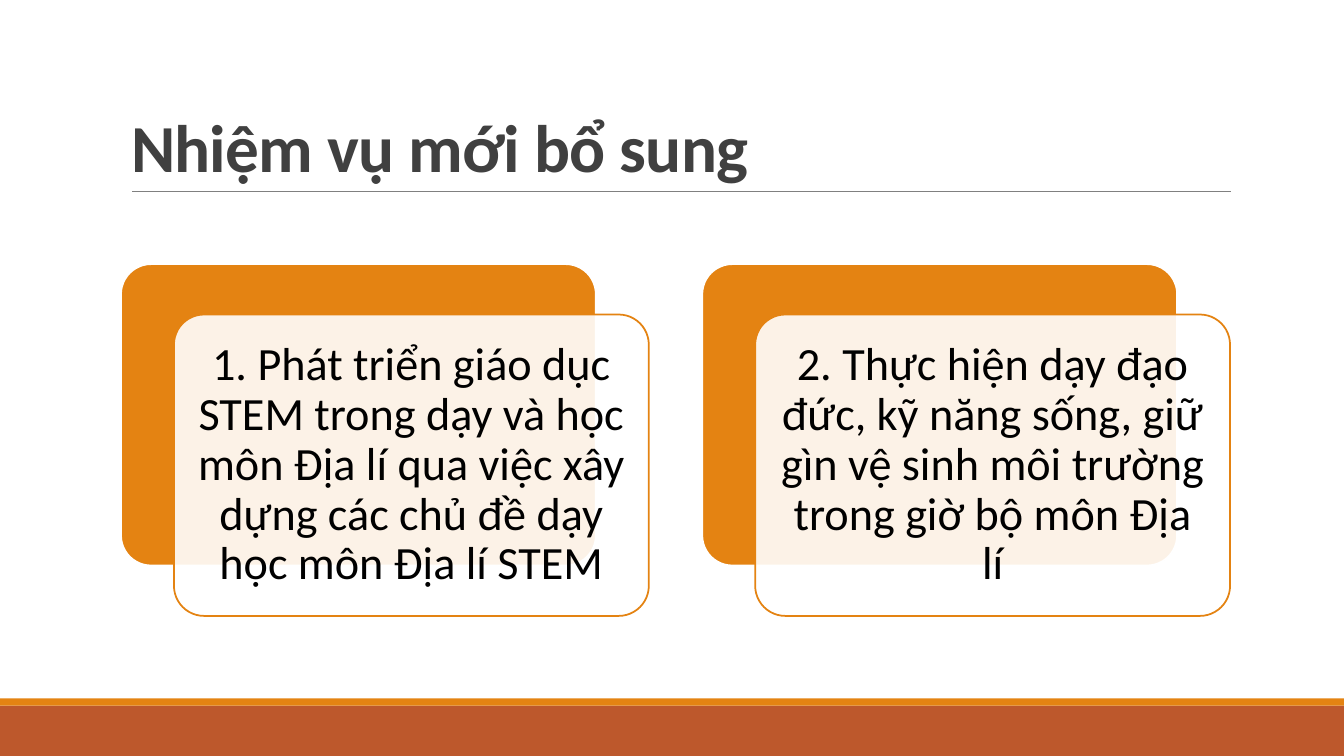
from lxml import etree
from pptx import Presentation
from pptx.dml.color import RGBColor
from pptx.enum.shapes import MSO_CONNECTOR, MSO_SHAPE
from pptx.enum.text import MSO_ANCHOR, MSO_AUTO_SIZE, PP_ALIGN
from pptx.oxml.ns import qn
from pptx.util import Inches, Pt

RECTANGLE = MSO_SHAPE.RECTANGLE
ROUNDED = MSO_SHAPE.ROUNDED_RECTANGLE
STRAIGHT = MSO_CONNECTOR.STRAIGHT
LEFT, CENTER = PP_ALIGN.LEFT, PP_ALIGN.CENTER
MIDDLE, BOTTOM = MSO_ANCHOR.MIDDLE, MSO_ANCHOR.BOTTOM

COLORS = {
    "orange": "E48312",
    "rust": "BD582C",
    "white": "FFFFFF",
    "rule": "808080",
    "title": "404040",
    "text": "000000",
}
TASKS = [
    "1. Phát triển giáo dục STEM trong dạy và học môn Địa lí qua việc xây dựng các chủ đề dạy học môn Địa lí STEM",
    "2. Thực hiện dạy đạo đức, kỹ năng sống, giữ gìn vệ sinh môi trường trong giờ bộ môn Địa lí",
]
CARD_WIDTH, CARD_HEIGHT = 4.71, 2.99
CARD_LEFT, CARD_TOP, CARD_STEP = 1.2, 2.62, 5.765
PANEL_SHIFT_X, PANEL_SHIFT_Y = 0.525, 0.5

presentation = Presentation()
presentation.slide_width = Inches(13.33)
presentation.slide_height = Inches(7.5)
slide = presentation.slides.add_slide(presentation.slide_layouts[5])


def add_box(kind, left, top, width, height, fill, line=None):
    shape = slide.shapes.add_shape(
        kind, Inches(left), Inches(top), Inches(width), Inches(height)
    )
    shape.shadow.inherit = False
    shape.fill.solid()
    shape.fill.fore_color.rgb = RGBColor.from_string(COLORS[fill])
    if line:
        shape.line.color.rgb = RGBColor.from_string(COLORS[line])
        shape.line.width = Pt(1.25)
    else:
        shape.line.fill.background()
    if kind == ROUNDED:
        shape.adjustments[0] = 0.1
    return shape


def write_text(shape, text, *, size, color, align, anchor, spacing,
               bold=False, inset_x=0.1, inset_y=0.05):
    frame = shape.text_frame
    frame.word_wrap = True
    frame.auto_size = MSO_AUTO_SIZE.NONE
    frame.vertical_anchor = anchor
    frame.margin_left = frame.margin_right = Inches(inset_x)
    frame.margin_top = frame.margin_bottom = Inches(inset_y)
    paragraph = frame.paragraphs[0]
    paragraph.alignment = align
    paragraph.line_spacing = spacing
    run = paragraph.add_run()
    run.text = text
    run.font.name = "Calibri"
    run.font.size = Pt(size)
    run.font.bold = bold
    run.font.color.rgb = RGBColor.from_string(COLORS[color])
    return run


add_box(RECTANGLE, 0, 7, 13.33, 0.5, "rust")
add_box(RECTANGLE, 0, 6.93, 13.33, 0.07, "orange")

title_rule = slide.shapes.add_connector(
    STRAIGHT, Inches(1.31), Inches(1.9), Inches(12.21), Inches(1.9)
)
title_rule.line.color.rgb = RGBColor.from_string(COLORS["rule"])
title_rule.line.width = Pt(0.5)
etree.SubElement(title_rule._element.spPr, qn("a:effectLst"))

title = slide.shapes.title
title.left, title.top = Inches(1.2), Inches(0.31)
title.width, title.height = Inches(11), Inches(1.59)
title_run = write_text(title, "Nhiệm vụ mới bổ sung", size=48, color="title",
                       align=LEFT, anchor=BOTTOM, spacing=0.85, bold=True)
title_run.font._element.set("spc", "-50")

for index, task in enumerate(TASKS):
    left = CARD_LEFT + index * CARD_STEP
    add_box(ROUNDED, left, CARD_TOP, CARD_WIDTH, CARD_HEIGHT, "orange", "white")
    panel = add_box(ROUNDED, left + PANEL_SHIFT_X, CARD_TOP + PANEL_SHIFT_Y,
                    CARD_WIDTH, CARD_HEIGHT, "white", "orange")
    panel_color = panel._element.spPr.find(qn("a:solidFill")).find(qn("a:srgbClr"))
    etree.SubElement(panel_color, qn("a:alpha"), val="90000")
    write_text(panel, task, size=33, color="text", align=CENTER, anchor=MIDDLE,
               spacing=0.9, inset_x=0.14, inset_y=0.14)

presentation.save("out.pptx")
